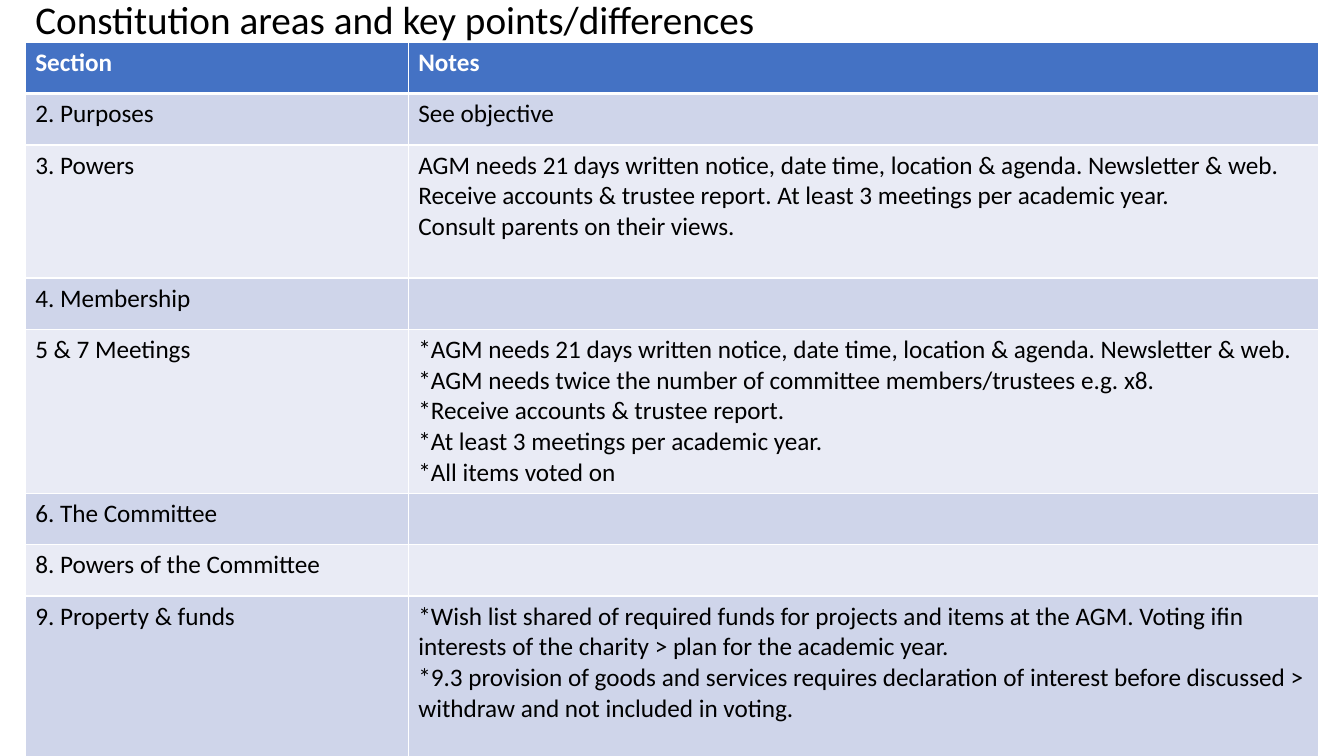
from pptx import Presentation
from pptx import util as u
from pptx.dml.color import RGBColor
from pptx.enum import text
from pptx.oxml import parse_xml
from pptx.oxml.ns import nsdecls

FONT = "Calibri"
BLACK, WHITE = "000000", "FFFFFF"
HEADER_FILL = "4472C4"
BAND_FILLS = ["CFD5EA", "E9EBF5"]

# Section, paragraphs of notes, row height in points
ROWS = [
    ("Section", ["Notes"], 36.7),
    ("2. Purposes", ["See objective"], 36.7),
    ("3. Powers", [
        "AGM needs 21 days written notice, date time, location & agenda. "
        "Newsletter & web. Receive accounts & trustee report. "
        "At least 3 meetings per academic year.\n"
        "Consult parents on their views."], 95),
    ("4. Membership", [], 36.7),
    ("5 & 7 Meetings", [
        "*AGM needs 21 days written notice, date time, location & agenda. "
        "Newsletter & web. *AGM needs twice the number of committee "
        "members/trustees e.g. x8.\n*Receive accounts & trustee report.",
        "*At least 3 meetings per academic year.",
        "*All items voted on"], 117.2),
    ("6. The Committee", [], 36.7),
    ("8. Powers of the Committee", [], 36.7),
    ("9. Property & funds", [
        "*Wish list shared of required funds for projects and items at the "
        "AGM. Voting ifin interests of the charity > plan for the academic year.",
        "*9.3 provision of goods and services requires declaration of interest "
        "before discussed > withdraw and not included in voting."], 117.2),
]


def rgb(value):
    return RGBColor.from_string(value)


def add_span(para, words, size, color, bold=False):
    span = para.add_run()
    span.text = words
    span.font.name = FONT
    span.font.size = u.Pt(size)
    span.font.bold = bold
    span.font.color.rgb = rgb(color)


def add_title(page, words):
    box = page.shapes.title
    box.left, box.top = u.Pt(18), u.Pt(-31)
    box.width, box.height = u.Pt(798), u.Pt(93)
    frame = box.text_frame
    frame.vertical_anchor = text.MSO_ANCHOR.MIDDLE
    frame.word_wrap = True
    para = frame.paragraphs[0]
    para.alignment = text.PP_ALIGN.LEFT
    para.line_spacing = 0.9
    add_span(para, words, 28, BLACK)


def set_borders(cell, widths):
    properties = cell._tc.get_or_add_tcPr()
    for side, width in widths.items():
        properties.append(parse_xml(
            f'<a:ln{side} {nsdecls("a")} w="{u.Pt(width)}"><a:solidFill>'
            f'<a:srgbClr val="{WHITE}"/></a:solidFill></a:ln{side}>'))


def fill_cell(cell, paragraphs, fill, color, bold):
    cell.fill.solid()
    cell.fill.fore_color.rgb = rgb(fill)
    frame = cell.text_frame
    for index, words in enumerate(paragraphs):
        para = frame.add_paragraph() if index else frame.paragraphs[0]
        for number, line in enumerate(words.split("\n")):
            if number:
                para.add_line_break()
            add_span(para, line, 18, color, bold)


def add_notes_table(page):
    height = sum(row[2] for row in ROWS)
    table = page.shapes.add_table(
        len(ROWS), 2, u.Pt(18), u.Pt(30.2), u.Pt(923.8), u.Pt(height)).table
    for column, width in zip(table.columns, (273.6, 650.2)):
        column.width = u.Pt(width)
    for index, (section, notes, row_height) in enumerate(ROWS):
        table.rows[index].height = u.Pt(row_height)
        header = index == 0
        fill = HEADER_FILL if header else BAND_FILLS[(index - 1) % 2]
        widths = {"L": 1, "R": 1, "T": 3 if index == 1 else 1,
                  "B": 3 if header else 1}
        for cell, paragraphs in zip(table.rows[index].cells, ([section], notes)):
            set_borders(cell, widths)
            fill_cell(cell, paragraphs, fill, WHITE if header else BLACK, header)


def main():
    deck = Presentation()
    deck.slide_width, deck.slide_height = u.Pt(960), u.Pt(540)
    page = deck.slides.add_slide(deck.slide_layouts[5])
    # Heading
    add_title(page, "Constitution areas and key points/differences")
    # Constitution sections with their notes
    add_notes_table(page)
    deck.save("out.pptx")


if __name__ == "__main__":
    main()
